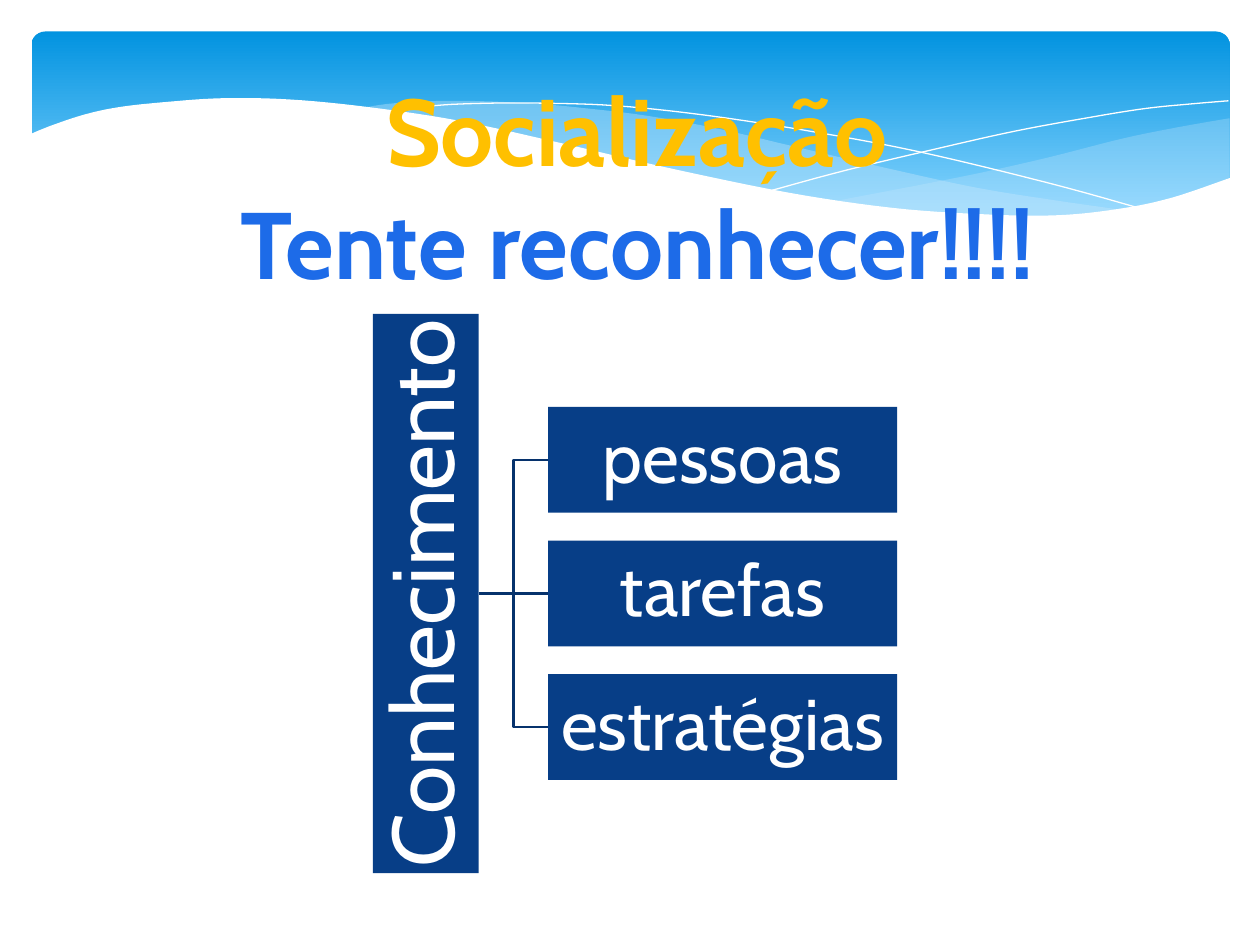
from copy import deepcopy
from dataclasses import dataclass

from pptx import Presentation
from pptx.dml.color import RGBColor as Rgb
from pptx.enum.shapes import MSO_CONNECTOR as Link, MSO_SHAPE as Form
from pptx.enum.text import MSO_ANCHOR as Anchor, PP_ALIGN as Align
from pptx.oxml.ns import qn
from pptx.oxml.xmlchemy import OxmlElement as Node
from pptx.util import Pt

SCALE = 9144


@dataclass(frozen=True)
class Theme:
    """Hold the colours, font and type sizes."""
    font: str = "Cabin"
    white: str = "FFFFFF"
    gold: str = "FFC000"
    navy: str = "073E87"
    line: str = "06326C"
    mist: str = "C6E7FC"
    sky: tuple = ((0, "0293E0"), (0.9, "83D3FE"))
    blue: tuple = ((0, "81ABFF"), (0.75, "1D6BE8"), (1, "005CCF"))
    title: int = 54
    root: int = 50
    item: int = 41


THEME = Theme()

PALE = [
    [(975, 94), (935, 101), (891, 110), (832, 125), (779, 137), (729, 147), (661, 160)],
    [(661, 160), (719, 167), (769, 171), (814, 172), (854, 170), (889, 166),
     (921, 160), (949, 152), (976, 141)],
]
SWELL = [
    [(893, 167), (837, 159), (775, 149), (706, 134), (629, 116), (569, 102),
     (514, 92), (465, 86), (420, 82), (361, 80), (313, 82), (286, 86)],
    [(286, 86), (342, 94), (404, 106), (491, 126), (566, 143), (634, 156),
     (695, 165), (748, 170), (796, 173), (838, 172), (867, 170), (893, 167)],
]
FALL = [(309, 90), (344, 84), (387, 82), (433, 82), (489, 84), (556, 91),
        (636, 103), (727, 120), (831, 145), (907, 166)]
RISE = [(613, 151), (672, 135), (748, 117), (806, 104), (866, 93), (910, 86),
        (951, 82), (975, 80)]
SHORE = [
    [(977, 141), (930, 157), (887, 166), (837, 171), (778, 170), (708, 165),
     (626, 153), (529, 133), (447, 114), (365, 96), (292, 85), (230, 79),
     (177, 78), (132, 81), (95, 85), (67, 91), (40, 100), (23, 107)],
    [(23, 224), (977, 224)],
]


def px(*vals):
    """Turn px lengths into EMU."""
    return [round(val * SCALE) for val in vals]


def grade(fill, node, stops):
    """Give a fill a gradient that runs from top to bottom."""
    fill.gradient()
    stack = next(node.iter(qn("a:gsLst")))
    while len(stack) < len(stops):
        stack.append(deepcopy(stack[0]))
    for stop, (place, tint) in zip(fill.gradient_stops, stops):
        stop.position = place
        stop.color.rgb = Rgb.from_string(tint)
    fill.gradient_angle = 270


def paint(fill, tint, alpha=100):
    """Give a fill a plain colour and an opacity in percent."""
    fill.solid()
    fill.fore_color.rgb = Rgb.from_string(tint)
    if alpha < 100:
        part = Node("a:alpha")
        part.set("val", str(alpha * 1000))
        fill._xPr.find(".//" + qn("a:srgbClr")).append(part)


def write(para, text, *, size, tint=None, stops=None, bold=False, space=None):
    """Write one centred run of text."""
    para.alignment = Align.CENTER
    para.line_spacing = space
    run = para.add_run()
    run.text = text
    font = run.font
    font.name, font.size, font.bold = THEME.font, Pt(size), bold
    if stops:
        grade(font.fill, run._r, stops)
    else:
        paint(font.fill, tint)


def box(slide, form, left, top, width, height):
    """Add a preset shape without line or shadow."""
    shape = slide.shapes.add_shape(form, *px(left, top, width, height))
    shape.shadow.inherit = False
    shape.line.fill.background()
    return shape


def label(slide, text, size, frame, turn=0):
    """Add a navy box with centred text."""
    shape = box(slide, Form.RECTANGLE, *frame)
    shape.rotation = turn
    paint(shape.fill, THEME.navy)
    body = shape.text_frame
    body.word_wrap, body.vertical_anchor = True, Anchor.MIDDLE
    body.margin_left = body.margin_right = body.margin_top = body.margin_bottom = px(3)[0]
    write(body.paragraphs[0], text, size=size, tint=THEME.white, space=0.9)
    return shape


def bend(pts, steps=6):
    """Run a smooth curve through the points."""
    ends = [pts[0], *pts, pts[-1]]
    curve = [
        tuple(b + t * (c - a) / 2 + t**2 * (a - 2.5 * b + 2 * c - d / 2)
              + t**3 * (1.5 * (b - c) + (d - a) / 2) for a, b, c, d in zip(*quad))
        for quad in zip(ends, ends[1:], ends[2:], ends[3:])
        for t in (i / steps for i in range(steps))
    ]
    return curve + [pts[-1]]


def wave(slide, sides, tint, alpha=100, close=True):
    """Draw a filled outline or an open hairline from curved sides."""
    first, *rest = [px(*pt) for side in sides
                    for pt in (bend(side) if len(side) > 2 else side)]
    pen = slide.shapes.build_freeform(*first, scale=1.0)
    pen.add_line_segments(rest, close=close)
    shape = pen.convert_to_shape()
    shape.shadow.inherit = False
    if close:
        paint(shape.fill, tint, alpha)
        shape.line.fill.background()
    else:
        shape.fill.background()
        paint(shape.line.fill, tint)
        shape.line.width = 0


def join(slide, root, item, start, end):
    """Link the turned root box to an item's left side."""
    kind = Link.STRAIGHT if start[1] == end[1] else Link.ELBOW
    link = slide.shapes.add_connector(kind, *px(*start, *end))
    link.begin_connect(root, 2)
    link.begin_x, link.begin_y = px(*start)
    link.end_connect(item, 1)
    paint(link.line.fill, THEME.line)
    link.line.width = Pt(1.25)
    link._element.spPr.append(Node("a:effectLst"))


def header(slide):
    """Draw the blue header with its waves."""
    band = box(slide, Form.ROUNDED_RECTANGLE, 25, 25, 951, 156)
    band.adjustments[0] = 0.07
    grade(band.fill, band._element, THEME.sky)
    wave(slide, [*PALE, [(976, 141), (976, 94)]], THEME.mist, 29)
    wave(slide, SWELL, THEME.mist, 40)
    for line in (FALL, RISE):
        wave(slide, [line], THEME.white, close=False)
    wave(slide, SHORE, THEME.white)


def title(slide):
    """Write the two title lines."""
    body = slide.shapes.add_textbox(*px(26, 52, 976, 192)).text_frame
    body.word_wrap = True
    write(body.paragraphs[0], "Socialização ", size=THEME.title, tint=THEME.gold, bold=True)
    write(body.add_paragraph(), "Tente reconhecer!!!! ", size=THEME.title,
          stops=THEME.blue, bold=True)


def tree(slide):
    """Draw the root box, its items and their links."""
    high, mid, left, step = 84, 471, 435, 106
    root = label(slide, "Conhecimento ", THEME.root, (116, mid - high // 2, 444, high), 270)
    for i, name in enumerate(("pessoas", "tarefas", "estratégias")):
        y = mid + (i - 1) * step
        item = label(slide, name, THEME.item, (left, y - high // 2, 277, high))
        join(slide, root, item, (380, mid), (left, y))


def main():
    """Build and save the slide."""
    deck = Presentation()
    deck.slide_width, deck.slide_height = px(1000, 750)
    slide = deck.slides.add_slide(deck.slide_layouts[6])
    header(slide)
    title(slide)
    tree(slide)
    deck.save("out.pptx")


if __name__ == "__main__":
    main()
